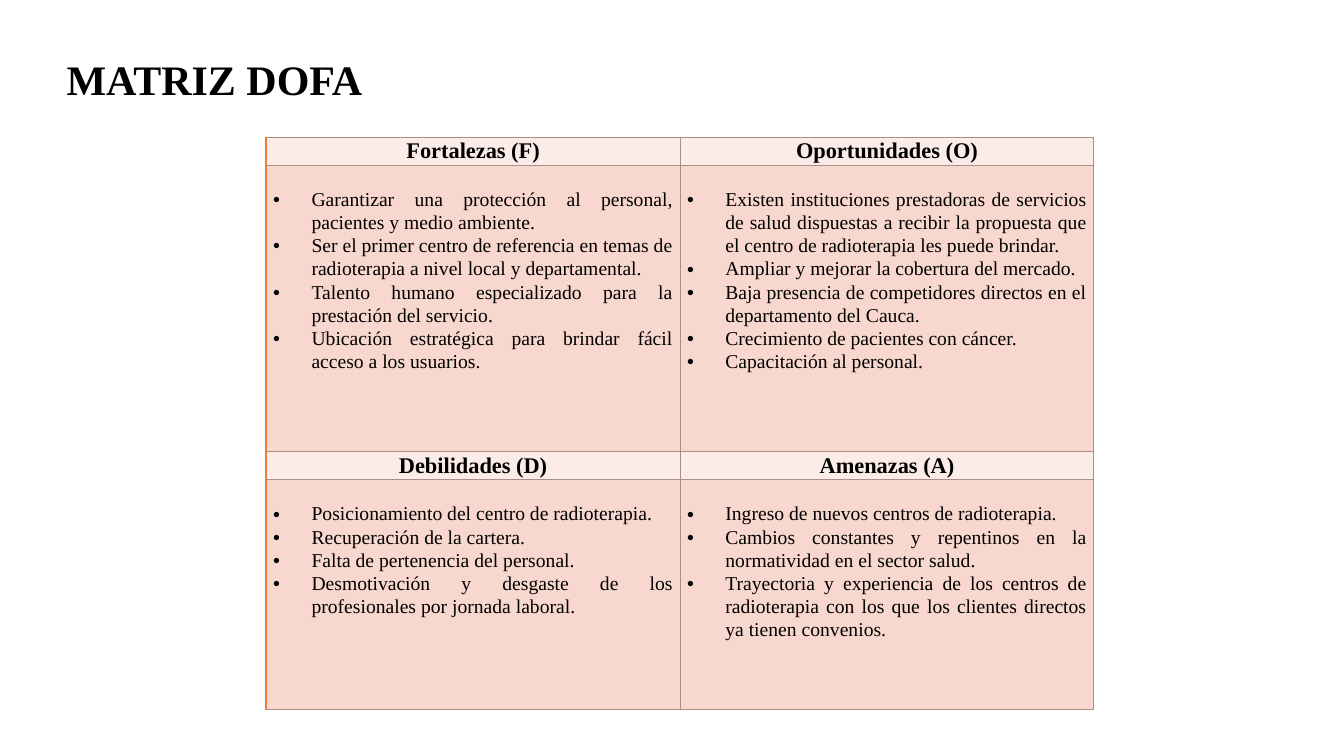
import pptx
import pptx.dml.color
import pptx.enum.text
import pptx.oxml.ns
import pptx.util
from lxml import etree

Inches, Pt = pptx.util.Inches, pptx.util.Pt
RGBColor = pptx.dml.color.RGBColor
ALIGN, ANCHOR = pptx.enum.text.PP_ALIGN, pptx.enum.text.MSO_ANCHOR

FONT = "Times New Roman"
BLACK = RGBColor(0x00, 0x00, 0x00)
ORANGE = RGBColor(0xED, 0x7D, 0x31)
BORDER = RGBColor(0xA9, 0x8F, 0x88)
HEAD_FILL = RGBColor(0xFC, 0xEC, 0xE8)
BODY_FILL = RGBColor(0xF8, 0xD7, 0xCE)

QUADRANTS = [
    [
        ("Fortalezas (F)", [
            "Garantizar una protección al personal, pacientes y medio ambiente.",
            "Ser el primer centro de referencia en temas de radioterapia a nivel local y departamental.",
            "Talento humano especializado para la prestación del servicio.",
            "Ubicación estratégica para brindar fácil acceso a los usuarios.",
        ]),
        ("Oportunidades (O)", [
            "Existen instituciones prestadoras de servicios de salud dispuestas a recibir la propuesta "
            "que el centro de radioterapia les puede brindar.",
            "Ampliar y mejorar la cobertura del mercado.",
            "Baja presencia de competidores directos en el departamento del Cauca.",
            "Crecimiento de pacientes con cáncer.",
            "Capacitación al personal.",
        ]),
    ],
    [
        ("Debilidades (D)", [
            "Posicionamiento del centro de radioterapia.",
            "Recuperación de la cartera.",
            "Falta de pertenencia del personal.",
            "Desmotivación y desgaste de los profesionales por jornada laboral.",
        ]),
        ("Amenazas (A)", [
            "Ingreso de nuevos centros de radioterapia.",
            "Cambios constantes y repentinos en la normatividad en el sector salud.",
            "Trayectoria y experiencia de los centros de radioterapia con los que los clientes "
            "directos ya tienen convenios.",
        ]),
    ],
]


def sub(parent, tag, **attrs):
    return etree.SubElement(parent, pptx.oxml.ns.qn(tag), attrs)


def add_run(p, text, size, bold=False):
    r = p.add_run()
    r.text = text
    r.font.name = FONT
    r.font.size = Pt(size)
    r.font.bold = bold
    r.font.color.rgb = BLACK


def add_bullet(p):
    pPr = p._p.get_or_add_pPr()
    pPr.set("marL", str(Inches(0.38)))
    pPr.set("indent", str(-Inches(0.38)))
    sub(pPr, "a:buFont", typeface="Arial")
    sub(pPr, "a:buChar", char="•")


def style_cell(cell, fill, left_color, top=0):
    # Borders come before the fill in the cell properties
    tcPr = cell._tc.get_or_add_tcPr()
    for side in "LRTB":
        color = left_color if side == "L" else BORDER
        width = 1.5 if color == ORANGE else 0.75
        ln = sub(tcPr, f"a:ln{side}", w=str(Pt(width)))
        sub(sub(ln, "a:solidFill"), "a:srgbClr", val=str(color))
    cell.fill.solid()
    cell.fill.fore_color.rgb = fill
    cell.margin_left = cell.margin_right = Inches(0.07)
    cell.margin_top, cell.margin_bottom = Inches(top), 0
    cell.vertical_anchor = ANCHOR.TOP


def add_title(s, x, y, w, h):
    title = s.shapes.title
    title.left, title.top, title.width, title.height = map(Inches, (x, y, w, h))
    tf = title.text_frame
    tf.vertical_anchor = ANCHOR.MIDDLE
    p = tf.paragraphs[0]
    p.alignment = ALIGN.LEFT
    p.line_spacing = 0.9
    add_run(p, "MATRIZ DOFA", 30, True)


def add_matrix(s, x, y, w, h):
    table = s.shapes.add_table(4, 2, *map(Inches, (x, y, w, h))).table
    table.first_row = table.horz_banding = False
    for row, height in zip(table.rows, (0.28, 2.84, 0.28, h - 3.4)):
        row.height = Inches(height)

    for i, pair in enumerate(QUADRANTS):
        for j, (heading, points) in enumerate(pair):
            left_color = BORDER if j else ORANGE
            # Quadrant heading
            head = table.cell(2 * i, j)
            style_cell(head, HEAD_FILL, left_color)
            p = head.text_frame.paragraphs[0]
            p.alignment = ALIGN.CENTER
            p.line_spacing = 1.07
            add_run(p, heading, 16, True)
            # Quadrant list
            body = table.cell(2 * i + 1, j)
            style_cell(body, BODY_FILL, left_color, top=0.22)
            tf = body.text_frame
            for k, point in enumerate(points):
                p = tf.add_paragraph() if k else tf.paragraphs[0]
                p.alignment = ALIGN.JUSTIFY
                p.line_spacing = 1.07
                add_bullet(p)
                add_run(p, point, 14)


def main():
    prs = pptx.Presentation()
    prs.slide_width, prs.slide_height = Inches(13.33), Inches(7.5)
    s = prs.slides.add_slide(prs.slide_layouts[5])
    add_title(s, 0.56, 0.42, 12.14, 0.78)
    add_matrix(s, 2.64, 1.36, 8.21, 5.68)
    prs.save("out.pptx")


if __name__ == "__main__":
    main()
